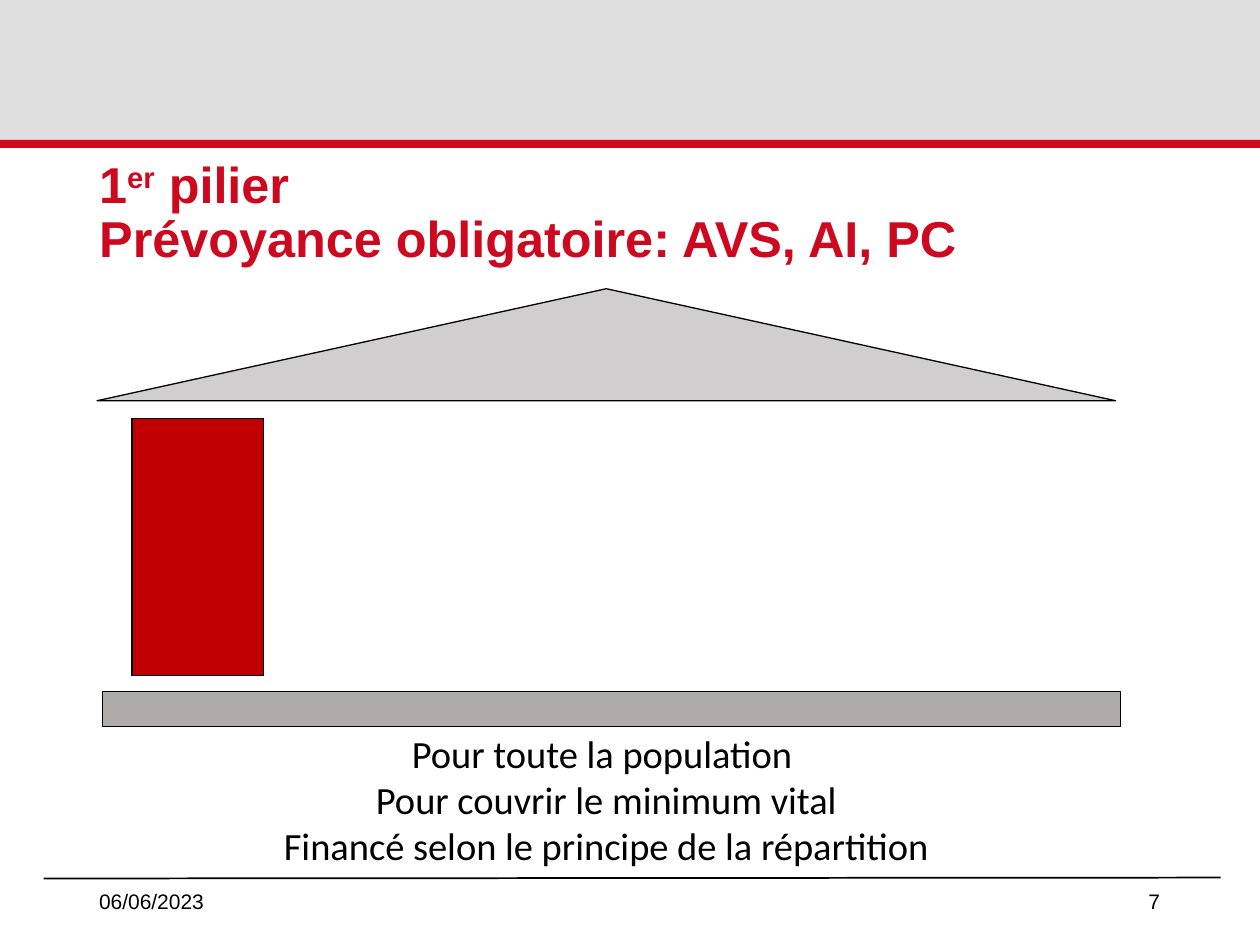
from pptx import Presentation
from pptx import util as u
from pptx.dml.color import RGBColor
from pptx.enum import shapes, text
from pptx.oxml import ns, xmlchemy

Pt = u.Pt
BLACK = RGBColor(0x00, 0x00, 0x00)
RED = RGBColor(0xCD, 0x09, 0x20)
PILLAR_RED = RGBColor(0xC0, 0x00, 0x00)
BAND_GREY = RGBColor(0xDD, 0xDE, 0xDD)
ROOF_GREY = RGBColor(0xD0, 0xCE, 0xCE)
BASE_GREY = RGBColor(0xAF, 0xAB, 0xAB)

TITLE_FORMAT = {"name": "Arial", "size": Pt(28.8), "bold": True}
FOOTER_FORMAT = {"name": "Arial", "size": Pt(12), "bold": False}
BODY_FORMAT = {"name": "Calibri", "size": Pt(22), "bold": False}
LEFT, CENTER, RIGHT = text.PP_ALIGN.LEFT, text.PP_ALIGN.CENTER, text.PP_ALIGN.RIGHT
MIDDLE, TOP = text.MSO_ANCHOR.MIDDLE, text.MSO_ANCHOR.TOP
RECTANGLE = shapes.MSO_SHAPE.RECTANGLE
TRIANGLE = shapes.MSO_SHAPE.ISOSCELES_TRIANGLE


def apply_format(target, values):
    for name, value in values.items():
        setattr(target, name, value)


def add_block(slide, kind, box, fill, outline=None):
    shape = slide.shapes.add_shape(kind, *map(Pt, box))
    shape.shadow.inherit = False
    shape.fill.solid()
    shape.fill.fore_color.rgb = fill
    if outline is None:
        shape.line.fill.background()
    else:
        shape.line.color.rgb = outline
        shape.line.width = Pt(0.75)


def add_text(slide, box, content, font_format, alignment, anchor=MIDDLE):
    shape = slide.shapes.add_textbox(*map(Pt, box))
    apply_format(shape.text_frame, {"word_wrap": True, "vertical_anchor": anchor})
    paragraph = shape.text_frame.paragraphs[0]
    paragraph.text = content
    paragraph.alignment = alignment
    for run in paragraph.runs:
        apply_format(run.font, font_format)
        run.font.color.rgb = BLACK


def add_header(slide, box):
    left, top, width, height = box
    stripe = 4.5
    add_block(slide, RECTANGLE, (left, top, width, height - stripe), BAND_GREY)
    add_block(slide, RECTANGLE, (left, top + height - stripe, width, stripe), RED)


def add_title(slide, box):
    title = slide.shapes.title
    apply_format(title, dict(zip(("left", "top", "width", "height"), map(Pt, box))))
    frame = title.text_frame
    apply_format(frame, {"word_wrap": True, "vertical_anchor": MIDDLE,
                         "auto_size": text.MSO_AUTO_SIZE.NONE})
    paragraph = frame.paragraphs[0]
    apply_format(paragraph, {"alignment": LEFT, "line_spacing": 0.9})

    def add_run(content):
        run = paragraph.add_run()
        run.text = content
        apply_format(run.font, TITLE_FORMAT)
        run.font.color.rgb = RED
        return run

    add_run("1")
    ordinal = add_run("er")
    ordinal.font._element.set("baseline", "30000")
    add_run(" pilier")
    paragraph.add_line_break()
    add_run("Prévoyance obligatoire: AVS, AI, PC")


def add_temple(slide, box):
    left, top, width, height = box
    roof_width = width - 3
    base_height = 20
    add_block(slide, TRIANGLE, (left, top, roof_width, 64), ROOF_GREY, BLACK)
    add_block(slide, RECTANGLE, (left + 3, top + height - base_height, roof_width, base_height),
              BASE_GREY, BLACK)
    add_block(slide, RECTANGLE, (left + 20, top + 74, 75, 147), PILLAR_RED, BLACK)


def add_purpose(slide, box):
    lines = ("Pour toute la population ", "Pour couvrir le minimum vital",
             "Financé selon le principe de la répartition")
    add_text(slide, box, "\v".join(lines), BODY_FORMAT, CENTER, TOP)


def add_footer(slide, box):
    left, top, width, height = box
    line = slide.shapes.add_connector(shapes.MSO_CONNECTOR.STRAIGHT, Pt(left), Pt(top + 1.5),
                                      Pt(left + width), Pt(top + 1))
    line.line.color.rgb = BLACK
    line.line.width = Pt(1)
    line._element.spPr.append(xmlchemy.OxmlElement("a:effectLst"))
    margin, field = 24.5, 162
    right = left + width - margin - field - 3
    add_text(slide, (left + margin, top, field, height), "06/06/2023", FOOTER_FORMAT, LEFT)
    add_text(slide, (right, top, field, height), "7", FOOTER_FORMAT, RIGHT)


def main():
    presentation = Presentation()
    presentation.slide_width, presentation.slide_height = Pt(720), Pt(540)
    slide = presentation.slides.add_slide(presentation.slide_layouts[5])
    add_header(slide, (0, 0, 720, 84.5))
    add_title(slide, (49.5, 94, 621, 57))
    add_temple(slide, (55.5, 165, 585, 250))
    add_purpose(slide, (67.5, 413.5, 558, 87))
    add_footer(slide, (25, 500.5, 672.5, 29))
    presentation.save("out.pptx")


if __name__ == "__main__":
    main()
